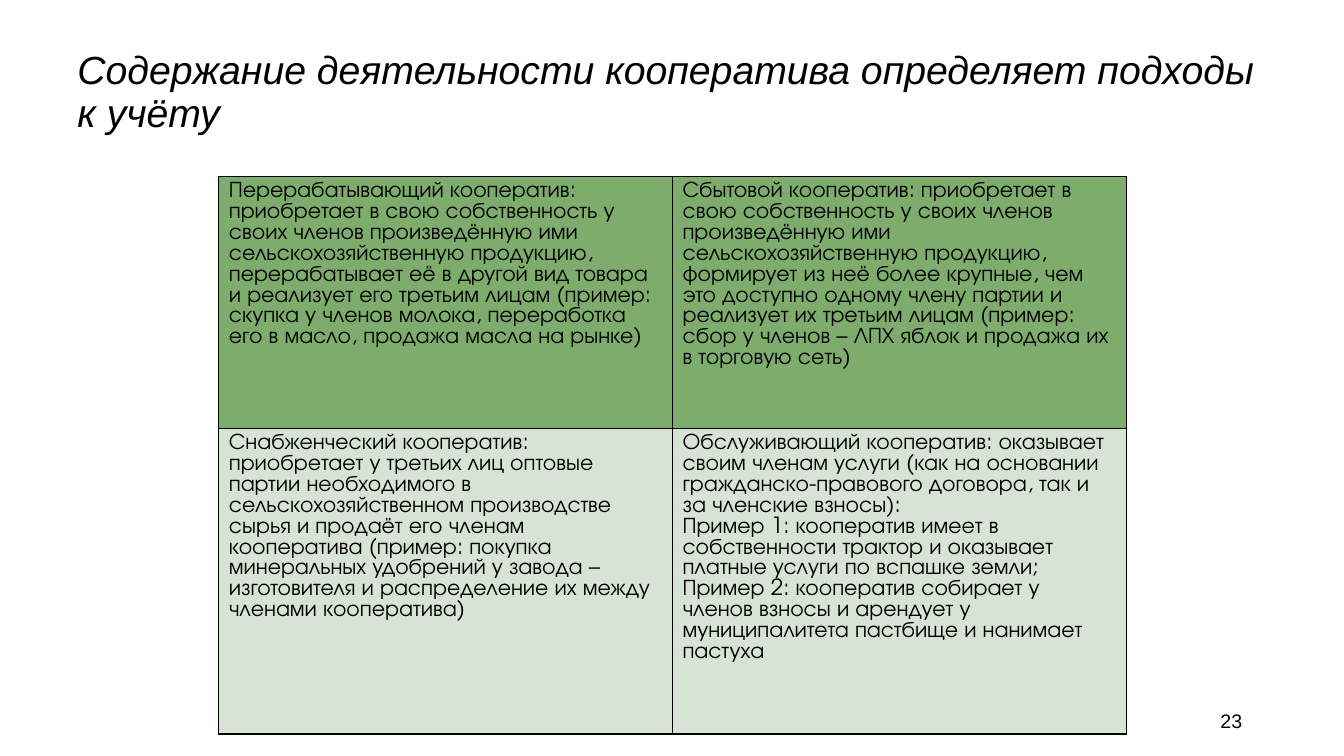
from dataclasses import dataclass

from lxml import etree
from pptx import Presentation
from pptx.dml.color import RGBColor
from pptx.enum.text import MSO_ANCHOR, PP_ALIGN
from pptx.oxml.ns import qn
from pptx.util import Emu, Pt

LEFT, RIGHT = PP_ALIGN.LEFT, PP_ALIGN.RIGHT
TOP, MIDDLE = MSO_ANCHOR.TOP, MSO_ANCHOR.MIDDLE
EMU_PER_PX = 9144  # 100 px to the inch
BORDER_SIDES = ("a:lnL", "a:lnR", "a:lnT", "a:lnB")


@dataclass(frozen=True)
class Theme:
    ink: str = "000000"
    row_fills: tuple = ("7DAC6C", "D7E3D4")
    heading_font: str = "Arial"
    table_font: str = "TeX Gyre Adventor"
    title_size: int = 28
    table_size: int = 16
    number_size: int = 14
    border_width: int = 1


TITLE = "Содержание деятельности кооператива определяет подходы к учёту"
PAGE_NUMBER = "23"
COOPERATIVES = [
    [
        ["Перерабатывающий кооператив: приобретает в свою собственность у своих членов "
         "произведённую ими сельскохозяйственную продукцию, перерабатывает её в другой вид "
         "товара и реализует его третьим лицам (пример: скупка у членов молока, переработка "
         "его в масло, продажа масла на рынке)"],
        ["Сбытовой кооператив: приобретает в свою собственность у своих членов произведённую "
         "ими сельскохозяйственную продукцию, формирует из неё более крупные, чем это доступно "
         "одному члену партии и реализует их третьим лицам (пример: сбор у членов – ЛПХ яблок "
         "и продажа их в торговую сеть)"],
    ],
    [
        ["Снабженческий кооператив: приобретает у третьих лиц оптовые партии необходимого в "
         "сельскохозяйственном производстве сырья и продаёт его членам кооператива (пример: "
         "покупка минеральных удобрений у завода – изготовителя и распределение их между "
         "членами кооператива)"],
        ["Обслуживающий кооператив: оказывает своим членам услуги (как на основании "
         "гражданско-правового договора, так и за членские взносы):",
         "Пример 1: кооператив имеет в собственности трактор и оказывает платные услуги по "
         "вспашке земли;",
         "Пример 2: кооператив собирает у членов взносы и арендует у муниципалитета пастбище "
         "и нанимает пастуха"],
    ],
]


def px(length):
    return Emu(length * EMU_PER_PX)


def set_format(target, **values):
    for name, value in values.items():
        setattr(target, name, value)


class PageBuilder:
    def __init__(self, page, theme):
        self.page = page
        self.theme = theme

    def fill_frame(self, frame, lines, font, size, italic=False, align=LEFT, spacing=None):
        """Put one paragraph per line into the text frame."""
        for index, line in enumerate(lines):
            para = frame.add_paragraph() if index else frame.paragraphs[0]
            set_format(para, alignment=align, line_spacing=spacing)
            span = para.add_run()
            span.text = line
            set_format(span.font, name=font, size=Pt(size), italic=italic, bold=False)
            span.font.color.rgb = RGBColor.from_string(self.theme.ink)

    def text(self, place, line, size, **style):
        box = self.page.shapes.add_textbox(*map(px, place))
        set_format(box.text_frame, word_wrap=True, vertical_anchor=MIDDLE)
        self.fill_frame(box.text_frame, [line], self.theme.heading_font, size, **style)

    def border(self, cell):
        properties = cell._tc.get_or_add_tcPr()
        for side in BORDER_SIDES:
            line = etree.SubElement(properties, qn(side), w=str(Pt(self.theme.border_width)))
            fill = etree.SubElement(line, qn("a:solidFill"))
            etree.SubElement(fill, qn("a:srgbClr"), val=self.theme.ink)

    def table(self, left, top, column_width, row_heights, rows):
        columns = len(rows[0])
        place = (left, top, column_width * columns, sum(row_heights))
        grid = self.page.shapes.add_table(len(rows), columns, *map(px, place)).table
        set_format(grid, first_row=False, horz_banding=False)
        for column in grid.columns:
            column.width = px(column_width)
        for row, height, texts, color in zip(
                grid.rows, row_heights, rows, self.theme.row_fills):
            row.height = px(height)
            for cell, lines in zip(row.cells, texts):
                set_format(cell, vertical_anchor=TOP, margin_left=px(10), margin_right=px(10),
                           margin_top=px(5), margin_bottom=px(5))
                self.border(cell)
                cell.fill.solid()
                cell.fill.fore_color.rgb = RGBColor.from_string(color)
                self.fill_frame(cell.text_frame, lines, self.theme.table_font,
                                self.theme.table_size)


def main():
    deck = Presentation()
    set_format(deck, slide_width=px(1333), slide_height=px(750))
    theme = Theme()
    builder = PageBuilder(deck.slides.add_slide(deck.slide_layouts[6]), theme)
    builder.text((67, 30, 1200, 125), TITLE, theme.title_size, italic=True, spacing=0.9)
    builder.table(217, 175, 450, (250, 277), COOPERATIVES)
    builder.text((942, 695, 300, 40), PAGE_NUMBER, theme.number_size, align=RIGHT)
    deck.save("out.pptx")


if __name__ == "__main__":
    main()
